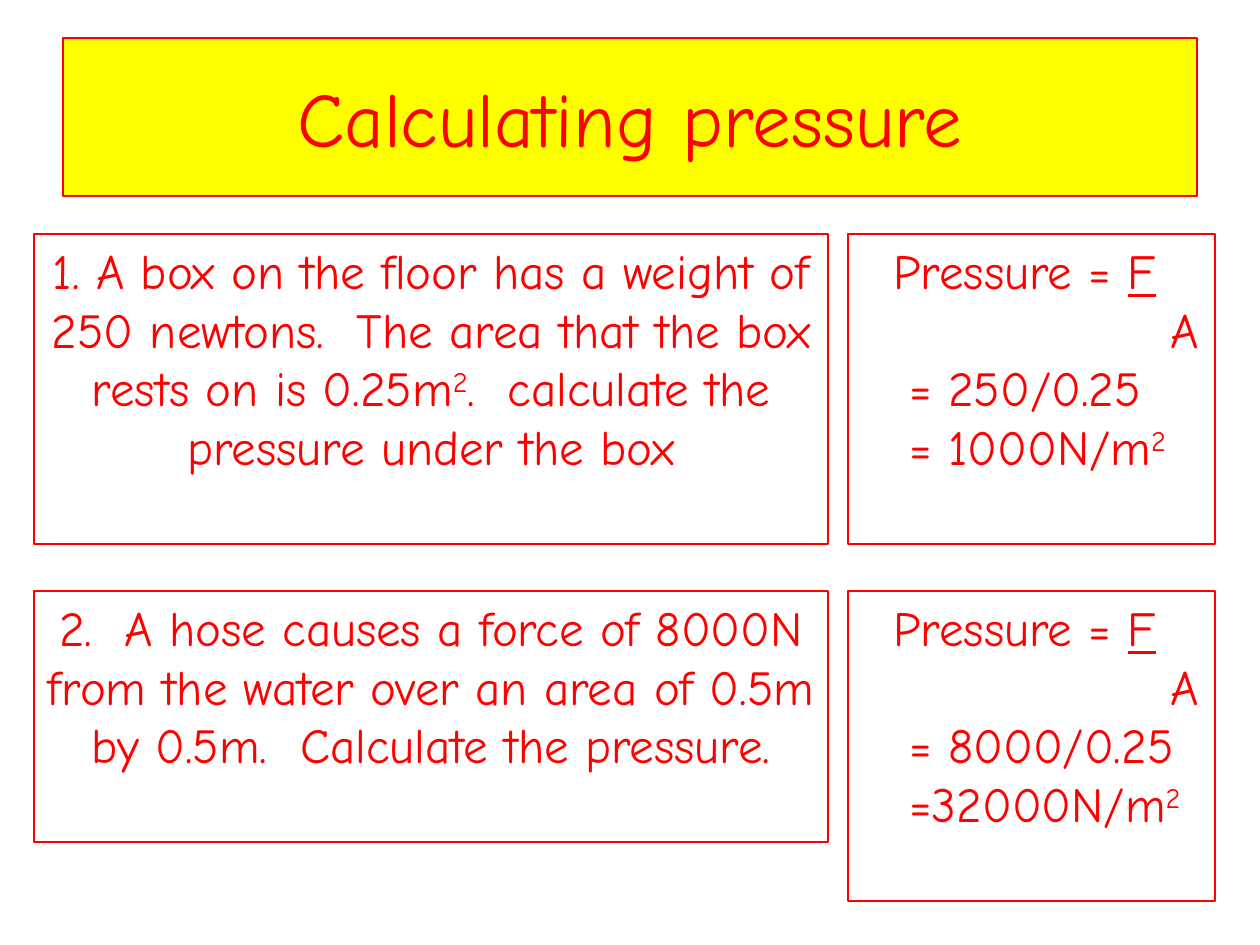
from pptx import Presentation
from pptx.dml.color import RGBColor
from pptx.enum.shapes import MSO_SHAPE
from pptx.enum.text import MSO_ANCHOR, PP_ALIGN
from pptx.util import Pt

RECT = MSO_SHAPE.RECTANGLE
TOP, MIDDLE = MSO_ANCHOR.TOP, MSO_ANCHOR.MIDDLE
LEFT, CENTER = PP_ALIGN.LEFT, PP_ALIGN.CENTER
FONT = "Comic Neue"
RED, YELLOW = "FF0000", "FFFF00"


def px(count):
    """Turn pixels into EMU at 126 to the inch."""
    return round(count * 914400 / 126)


def color(code):
    """Return the colour for a hex string."""
    return RGBColor.from_string(code)


def add_box(slide, left, top, width, height, fill=None, anchor=TOP):
    """Add a red-edged box and return its text frame."""
    box = slide.shapes.add_shape(RECT, px(left), px(top), px(width), px(height))
    box.shadow.inherit = False
    box.line.color.rgb = color(RED)
    box.line.width = Pt(0.75)
    if fill:
        box.fill.solid()
        box.fill.fore_color.rgb = color(fill)
    else:
        box.fill.background()
    frame = box.text_frame
    frame.word_wrap = True
    frame.vertical_anchor = anchor
    return frame


def add_run(para, text, size=28, style=None):
    """Add one run, plain, underlined or raised."""
    run = para.add_run()
    run.text = text
    run.font.name = FONT
    run.font.size = Pt(size)
    run.font.color.rgb = color(RED)
    if style == "under":
        run.font.underline = True
    elif style == "super":
        run._r.get_or_add_rPr().set("baseline", "30000")


def add_task(slide, top, height, parts):
    """Add a question box with centred text."""
    para = add_box(slide, 34, top, 794, height).paragraphs[0]
    para.alignment = CENTER
    for text, style in parts:
        add_run(para, text, style=style)


def add_answer(slide, top, ratio, result):
    """Add a worked answer with indented lines."""
    frame = add_box(slide, 848, top, 367, 310)
    lines = [
        (33, [("Pressure = ", None), ("F", "under")]),
        (310, [("A", None)]),
        (49, [(ratio, None)]),
        (49, [(result, None), ("2", "super")]),
    ]
    for index, (indent, parts) in enumerate(lines):
        para = frame.add_paragraph() if index else frame.paragraphs[0]
        para.alignment = LEFT
        para._p.get_or_add_pPr().set("marL", str(px(indent)))
        for text, style in parts:
            add_run(para, text, style=style)


def main():
    """Build the slide and save it."""
    deck = Presentation()
    deck.slide_width, deck.slide_height = px(1260), px(945)
    slide = deck.slides.add_slide(deck.slide_layouts[6])

    title = add_box(slide, 63, 38, 1134, 158, YELLOW, MIDDLE).paragraphs[0]
    title.alignment = CENTER
    add_run(title, "Calculating pressure", 44)

    box_task = [
        ("1. A box on the floor has a weight of 250 newtons.  "
         "The area that the box rests on is 0.25m", None),
        ("2", "super"),
        (".  calculate the pressure under the box", None),
    ]
    hose_task = [
        ("2.  A hose causes a force of 8000N from the water over an area "
         "of 0.5m by 0.5m.  Calculate the pressure.", None),
    ]
    rows = [
        (234, 310, box_task, "= 250/0.25", "= 1000N/m"),
        (591, 251, hose_task, "= 8000/0.25", "=32000N/m"),
    ]
    for top, height, parts, ratio, result in rows:
        add_task(slide, top, height, parts)
        add_answer(slide, top, ratio, result)
    deck.save("out.pptx")


if __name__ == "__main__":
    main()
